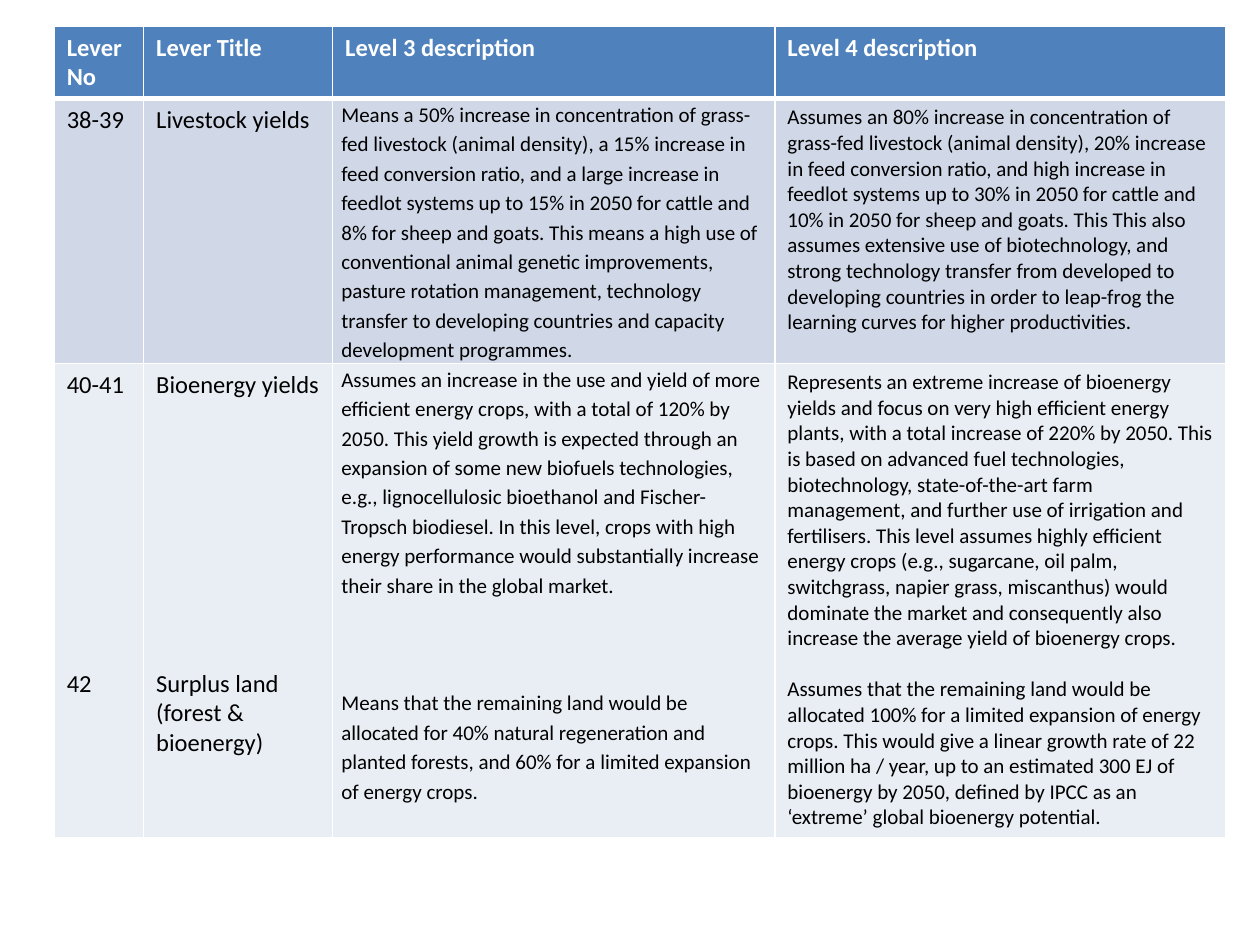
from lxml.etree import SubElement
from pptx import Presentation
from pptx.dml.color import RGBColor
from pptx.oxml.ns import qn
from pptx.util import Inches, Pt

COLORS = {"header": "4F81BD", "band": "D0D8E8", "light": "E9EDF4",
          "white": "FFFFFF", "black": "000000"}
FONT = "Calibri"
COLS = [0.71, 1.5, 3.51, 3.58]
ROWS = [0.56, 2.1, 3.76]
ROW_FILLS = ["header", "band", "light"]
LEVEL_3 = 2
SECTION_GAPS = [153.8, 153.8, 50.4, 14.6]

LEVERS = [
    [["Lever No"], ["Lever Title"], ["Level 3 description"], ["Level 4 description"]],
    [
        ["38-39"],
        ["Livestock yields"],
        ["Means a 50% increase in concentration of grass-fed livestock (animal density), "
         "a 15% increase in feed conversion ratio, and a large increase in feedlot systems "
         "up to 15% in 2050 for cattle and 8% for sheep and goats. This means a high use of "
         "conventional animal genetic improvements, pasture rotation management, technology "
         "transfer to developing countries and capacity development programmes."],
        ["Assumes an 80% increase in concentration of grass-fed livestock (animal density), "
         "20% increase in feed conversion ratio, and high increase in feedlot systems up to "
         "30% in 2050 for cattle and 10% in 2050 for sheep and goats. This This also assumes "
         "extensive use of biotechnology, and strong technology transfer from developed to "
         "developing countries in order to leap-frog the learning curves for higher "
         "productivities."],
    ],
    [
        ["40-41", "42"],
        ["Bioenergy yields", "Surplus land (forest & bioenergy)"],
        ["Assumes an increase in the use and yield of more efficient energy crops, with a "
         "total of 120% by 2050. This yield growth is expected through an expansion of some "
         "new biofuels technologies, e.g., lignocellulosic bioethanol and Fischer-Tropsch "
         "biodiesel. In this level, crops with high energy performance would substantially "
         "increase their share in the global market.",
         "Means that the remaining land would be allocated for 40% natural regeneration and "
         "planted forests, and 60% for a limited expansion of energy crops."],
        ["Represents an extreme increase of bioenergy yields and focus on very high efficient "
         "energy plants, with a total increase of 220% by 2050. This is based on advanced fuel "
         "technologies, biotechnology, state-of-the-art farm management, and further use of "
         "irrigation and fertilisers. This level assumes highly efficient energy crops (e.g., "
         "sugarcane, oil palm, switchgrass, napier grass, miscanthus) would dominate the "
         "market and consequently also increase the average yield of bioenergy crops.",
         "Assumes that the remaining land would be allocated 100% for a limited expansion of "
         "energy crops. This would give a linear growth rate of 22 million ha / year, up to an "
         "estimated 300 EJ of bioenergy by 2050, defined by IPCC as an ‘extreme’ global "
         "bioenergy potential."],
    ],
]


def rgb(name):
    """Return the named colour."""
    return RGBColor.from_string(COLORS[name])


def add_text(p, text, size=14, color="black", bold=False, spacing=1.0, before=0):
    """Write formatted text into a paragraph."""
    p.line_spacing = spacing
    p.space_before = Pt(before)
    r = p.add_run()
    r.text = text
    r.font.name = FONT
    r.font.size = Pt(size)
    r.font.bold = bold
    r.font.color.rgb = rgb(color)


def set_borders(cell, **widths):
    """Draw white cell borders with the given widths in points."""
    tcPr = cell._tc.get_or_add_tcPr()
    for side in "LRTB":
        ln = SubElement(tcPr, qn(f"a:ln{side}"), w=str(Pt(widths.get(side, 1))))
        fill = SubElement(ln, qn("a:solidFill"))
        SubElement(fill, qn("a:srgbClr"), val=COLORS["white"])


def fill_cell(cell, texts, row, col):
    """Format one cell and write its sections."""
    header = row == 0
    set_borders(cell, T=3 if row == 1 else 1, B=3 if header else 1)
    cell.fill.solid()
    cell.fill.fore_color.rgb = rgb(ROW_FILLS[row])
    tight = col == LEVEL_3 and not header
    if tight:
        cell.margin_left = cell.margin_right = Inches(0.07)
        cell.margin_top = cell.margin_bottom = 0
    tf = cell.text_frame
    for i, text in enumerate(texts):
        p = tf.add_paragraph() if i else tf.paragraphs[0]
        add_text(p, text, size=14 if header or col < LEVEL_3 else 12,
                 color="white" if header else "black", bold=header,
                 spacing=1.15 if tight else 1.0,
                 before=SECTION_GAPS[col] if i else 0)


def add_lever_table(s, left, top, width, height):
    """Place the lever table in the given box."""
    table = s.shapes.add_table(len(ROWS), len(COLS), left, top, width, height).table
    for column, share in zip(table.columns, COLS):
        column.width = int(width * share / sum(COLS))
    for row, share in zip(table.rows, ROWS):
        row.height = int(height * share / sum(ROWS))
    for i, texts in enumerate(LEVERS):
        for j, sections in enumerate(texts):
            fill_cell(table.cell(i, j), sections, i, j)


def main():
    """Build and save the slide."""
    prs = Presentation()
    prs.slide_width, prs.slide_height = Inches(10), Inches(7.5)
    s = prs.slides.add_slide(prs.slide_layouts[6])
    w, h = prs.slide_width, prs.slide_height
    add_lever_table(s, int(w * 0.043), int(h * 0.028), int(w * 0.93), int(h * 0.856))
    prs.save("out.pptx")


if __name__ == "__main__":
    main()
